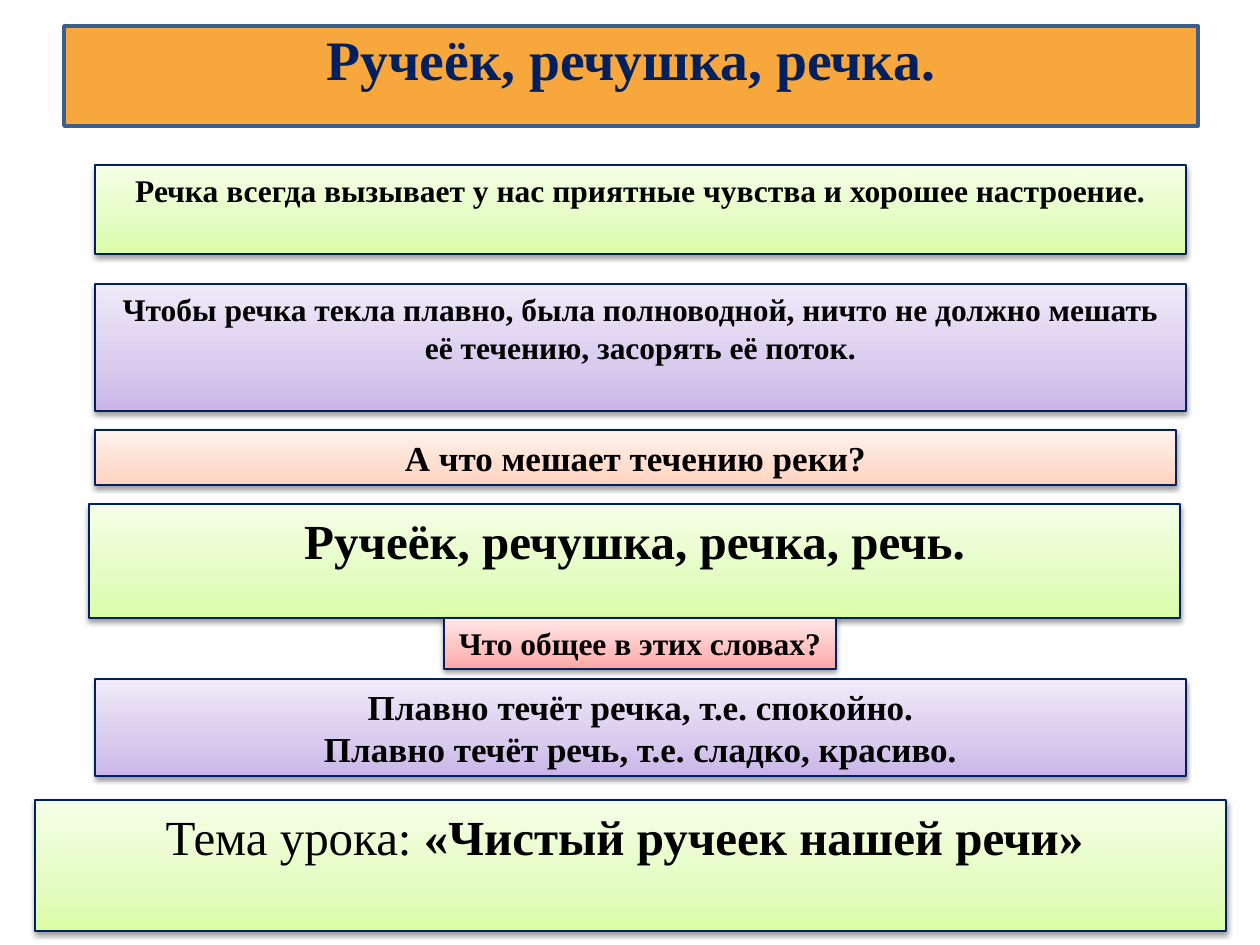
from copy import deepcopy

from pptx import Presentation
from pptx import util as u
from pptx.dml.color import RGBColor
from pptx.enum import shapes, text
from pptx.oxml import ns, xmlchemy

PX = 914400 / 126
FONT = "Times New Roman"
NAVY = RGBColor(0x00, 0x20, 0x60)
BLACK = RGBColor(0x00, 0x00, 0x00)
ORANGE = RGBColor(0xF8, 0xA7, 0x3C)
STEEL = RGBColor(0x3A, 0x5F, 0x8C)
GREEN = (RGBColor(0xDA, 0xFD, 0xA7), RGBColor(0xE4, 0xFC, 0xC2), RGBColor(0xF5, 0xFF, 0xE7))
PURPLE = (RGBColor(0xC9, 0xB5, 0xE8), RGBColor(0xD8, 0xCB, 0xEE), RGBColor(0xF0, 0xEA, 0xF9))
PEACH = (RGBColor(0xFF, 0xD2, 0xBD), RGBColor(0xFF, 0xDE, 0xD0), RGBColor(0xFF, 0xF2, 0xED))
PINK = (RGBColor(0xFF, 0xA6, 0xA5), RGBColor(0xFF, 0xC0, 0xBF), RGBColor(0xFF, 0xE7, 0xE7))
STOPS = (0, 0.35, 1)

PANELS = [
    ((95, 165, 1091, 89), GREEN, 18,
     [[("Речка всегда вызывает у нас приятные чувства и хорошее настроение.", True)]]),
    ((95, 284, 1091, 127), PURPLE, 18,
     [[("Чтобы речка текла плавно, была полноводной, ничто не должно мешать "
        "её течению, засорять её поток.", True)]]),
    ((95, 430, 1081, 55), PEACH, 20, [[("А что мешает течению реки?", True)]]),
    ((89, 504, 1091, 114), GREEN, 28, [[("Ручеёк, речушка, речка, речь.", True)]]),
    ((444, 618, 392, 51), PINK, 18, [[("Что общее в этих словах?", True)]]),
    ((95, 679, 1091, 97), PURPLE, 20,
     [[("Плавно течёт речка, т.е. спокойно.", True)],
      [("Плавно течёт речь, т.е. сладко, красиво.", True)]]),
    ((35, 800, 1191, 131), GREEN, 28,
     [[("Тема урока: ", False), ("«Чистый ручеек нашей речи» ", True)]]),
]


def px(value):
    """Turn a length in px into EMU."""
    return u.Emu(round(value * PX))


def add_element(parent, tag, **attributes):
    """Append a DrawingML element with its attributes and return it."""
    element = xmlchemy.OxmlElement(tag)
    for name, value in attributes.items():
        element.set(name, str(value))
    parent.append(element)
    return element


def add_run(paragraph, wording, size, color, bold):
    """Add one formatted run to a centred paragraph."""
    paragraph.alignment = text.PP_ALIGN.CENTER
    run = paragraph.add_run()
    run.text = wording
    run.font.name = FONT
    run.font.size = u.Pt(size)
    run.font.bold = bold
    run.font.color.rgb = color


def fill_gradient(shape, colors):
    """Fill a shape with three colours running from bottom to top."""
    shape.fill.gradient()
    shape.fill.gradient_angle = 90
    stop_list = shape.element.spPr.find(".//" + ns.qn("a:gsLst"))
    stop_list.append(deepcopy(stop_list[-1]))
    for stop, position, color in zip(shape.fill.gradient_stops, STOPS, colors):
        stop.position = position
        stop.color.rgb = color


def add_shadow(shape):
    """Give a shape a soft shadow falling straight down."""
    shape.shadow.inherit = False
    effects = shape.element.spPr.find(ns.qn("a:effectLst"))
    shadow = add_element(effects, "a:outerShdw", blurRad=u.Pt(3.1), dist=u.Pt(1.6),
                         dir=5400000, rotWithShape=0)
    color = add_element(shadow, "a:srgbClr", val=BLACK)
    add_element(color, "a:alpha", val=38000)


def format_title(title, box):
    """Place the title as a rounded orange banner."""
    title.left, title.top, title.width, title.height = map(px, box)
    geometry = add_element(title.element.spPr, "a:prstGeom", prst="roundRect")
    add_element(geometry, "a:avLst")
    title.fill.solid()
    title.fill.fore_color.rgb = ORANGE
    title.line.color.rgb = STEEL
    title.line.width = u.Pt(2)
    frame = title.text_frame
    frame.auto_size = text.MSO_AUTO_SIZE.NONE
    frame.vertical_anchor = text.MSO_ANCHOR.BOTTOM
    frame.margin_left = frame.margin_right = frame.margin_top = 0
    frame.margin_bottom = px(34)
    add_run(frame.paragraphs[0], "Ручеёк, речушка, речка.", 31.8, NAVY, True)


def add_panel(slide, box, colors, size, lines):
    """Add a shaded panel with its lines of text."""
    shape = slide.shapes.add_shape(shapes.MSO_SHAPE.RECTANGLE, *map(px, box))
    fill_gradient(shape, colors)
    shape.line.color.rgb = NAVY
    shape.line.width = u.Pt(0.75)
    add_shadow(shape)
    frame = shape.text_frame
    frame.word_wrap = True
    frame.vertical_anchor = text.MSO_ANCHOR.TOP
    for index, runs in enumerate(lines):
        paragraph = frame.add_paragraph() if index else frame.paragraphs[0]
        for wording, bold in runs:
            add_run(paragraph, wording, size, BLACK, bold)


def main():
    """Build the lesson slide and save it."""
    presentation = Presentation()
    presentation.slide_width, presentation.slide_height = px(1260), px(945)
    slide = presentation.slides.add_slide(presentation.slide_layouts[5])
    format_title(slide.shapes.title, (64, 26, 1134, 100))
    for panel in PANELS:
        add_panel(slide, *panel)
    presentation.save("out.pptx")


if __name__ == "__main__":
    main()
